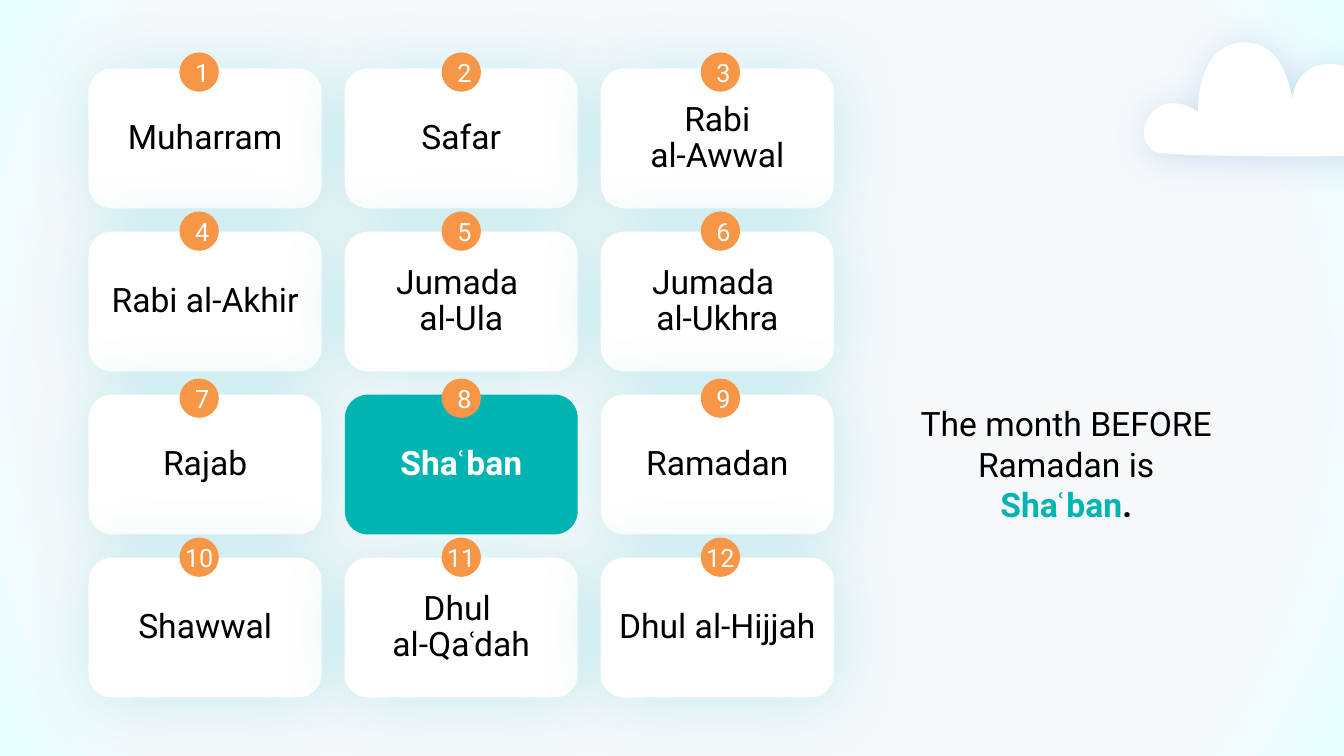
import lxml.etree
import pptx
import pptx.dml.color
import pptx.enum.shapes
import pptx.enum.text
import pptx.oxml.ns
import pptx.util

SHAPE = pptx.enum.shapes.MSO_SHAPE
FONT = "Roboto"
COLORS = {
    "sky": "F6F9FC", "sky_edge": "E7FFFF", "white": "FFFFFF", "black": "000000",
    "teal": "00B4B1", "orange": "F79646", "cloud_shadow": "8EB4E3",
}
MONTHS = [
    ["Muharram"], ["Safar"], ["Rabi", "al-Awwal"],
    ["Rabi al-Akhir"], ["Jumada ", "al-Ula"], ["Jumada ", "al-Ukhra"],
    ["Rajab"], ["Shaʿban"], ["Ramadan"],
    ["Shawwal"], ["Dhul ", "al-Qaʿdah"], ["Dhul al-Hijjah"],
]
ANSWER = 7
COLUMNS, ROWS = 3, 4
GAP = 0.23
BADGE = 0.39
BADGE_LEFTS = [0.9, 0.96, 0.99]     # from the left side of the card, by column
BADGE_TOPS = [-0.16, -0.2, -0.16, -0.2]   # from the top of the card, by row
# Cloud outline in hundredths of an inch: two handles and an end for each curve.
CLOUD_START = (1325, 64)
CLOUD_CURVES = [
    ((1292, 60), (1283, 86), (1282, 98)),
    ((1279, 89), (1274, 42), (1234, 42)),
    ((1191, 43), (1188, 96), (1188, 111)),
    ((1178, 104), (1168, 101), (1157, 103)),
    ((1147, 105), (1137, 115), (1135, 128)),
    ((1134, 135), (1136, 144), (1142, 148)),
    ((1146, 151), (1150, 152), (1154, 152)),
    ((1193, 156), (1359, 156), (1373, 153)),
    ((1384, 152), (1397, 148), (1399, 135)),
    ((1400, 126), (1394, 117), (1386, 114)),
    ((1379, 111), (1372, 109), (1364, 110)),
    ((1364, 105), (1361, 68), (1325, 64)),
]


def rgb(name):
    return pptx.dml.color.RGBColor.from_string(COLORS[name])


def add_child(parent, tag, **attributes):
    child = lxml.etree.SubElement(parent, pptx.oxml.ns.qn(tag))
    for name, value in attributes.items():
        child.set(name, str(value))
    return child


def inches(*lengths):
    return [pptx.util.Inches(length) for length in lengths]


def paint(sp, color):
    sp.shadow.inherit = False
    sp.fill.solid()
    sp.fill.fore_color.rgb = rgb(color)
    sp.line.fill.background()


def add_shadow(sp, color, opacity, blur):
    """Fill the empty effect list of a painted shape; blur is in points."""
    effects = sp.element.spPr.find(pptx.oxml.ns.qn("a:effectLst"))
    shadow = add_child(effects, "a:outerShdw", blurRad=pptx.util.Pt(blur),
                       dist=pptx.util.Pt(3), dir=45 * 60000, algn="tl", rotWithShape=0)
    tone = add_child(shadow, "a:srgbClr", val=COLORS[color])
    add_child(tone, "a:alpha", val=opacity * 1000)


def add_run(p, text, color, size=24, bold=False):
    r = p.add_run()
    r.text = text
    r.font.name = FONT
    r.font.size = pptx.util.Pt(size)
    r.font.bold = bold
    r.font.color.rgb = rgb(color)
    return r


def add_word(p, text, color, bold=False):
    """Add a name, with wider spacing after its ʿ when it is bold."""
    if not bold:
        add_run(p, text, color)
        return
    for part in text.partition("ʿ"):
        r = add_run(p, part, color, bold=True)
        if part == "ʿ":
            r.font._element.set("spc", "200")


def centred_paragraph(tf, index):
    p = tf.add_paragraph() if index else tf.paragraphs[0]
    p.alignment = pptx.enum.text.PP_ALIGN.CENTER
    return p


def add_background(s):
    fill = s.background.fill
    fill.gradient()
    for stop, color, position in zip(fill.gradient_stops, ("sky", "sky_edge"), (0.81, 1)):
        stop.color.rgb = rgb(color)
        stop.position = position
    grad = s.element.find(".//" + pptx.oxml.ns.qn("a:gradFill"))
    grad.remove(grad.find(pptx.oxml.ns.qn("a:lin")))
    circle = add_child(grad, "a:path", path="circle")
    add_child(circle, "a:fillToRect", l=50000, t=50000, r=50000, b=50000)


def add_card(s, box, lines, highlighted):
    sp = s.shapes.add_shape(SHAPE.ROUNDED_RECTANGLE, *inches(*box))
    paint(sp, "teal" if highlighted else "white")
    if not highlighted:
        add_shadow(sp, "teal", opacity=20, blur=50)
    tf = sp.text_frame
    tf.word_wrap = True
    tf.vertical_anchor = pptx.enum.text.MSO_ANCHOR.MIDDLE
    tf.margin_left = tf.margin_right = tf.margin_top = tf.margin_bottom = pptx.util.Inches(0.1)
    for i, line in enumerate(lines):
        p = centred_paragraph(tf, i)
        p.line_spacing = 0.9
        add_word(p, line, "white" if highlighted else "black", bold=highlighted)


def add_badge(s, left, top, number):
    sp = s.shapes.add_shape(SHAPE.OVAL, *inches(left, top, BADGE, BADGE))
    paint(sp, "orange")
    tf = sp.text_frame
    tf.word_wrap = number < 10
    tf.vertical_anchor = pptx.enum.text.MSO_ANCHOR.MIDDLE
    add_run(centred_paragraph(tf, 0), str(number), "white", size=18)


def add_calendar(s, left, top, width, height):
    card_w = (width - GAP * (COLUMNS - 1)) / COLUMNS
    card_h = (height - GAP * (ROWS - 1)) / ROWS
    corners = [(left + col * (card_w + GAP), top + row * (card_h + GAP))
               for row in range(ROWS) for col in range(COLUMNS)]
    for i, (x, y) in enumerate(corners):
        add_card(s, (x, y, card_w, card_h), MONTHS[i], i == ANSWER)
    for i, (x, y) in enumerate(corners):
        row, col = divmod(i, COLUMNS)
        add_badge(s, x + BADGE_LEFTS[col], y + BADGE_TOPS[row], i + 1)


def add_message(s, *box):
    tf = s.shapes.add_textbox(*inches(*box)).text_frame
    tf.word_wrap = True
    add_run(centred_paragraph(tf, 0), "The month BEFORE Ramadan is", "black")
    p = centred_paragraph(tf, 1)
    add_word(p, MONTHS[ANSWER][0], "teal", bold=True)
    add_run(p, ".", "black", bold=True)


def bend_lines(sp):
    """Turn each three line segments of a freeform into one Bezier curve."""
    lines = list(sp.element.iter(pptx.oxml.ns.qn("a:lnTo")))
    for handle1, handle2, end in zip(lines[::3], lines[1::3], lines[2::3]):
        curve = lxml.etree.Element(pptx.oxml.ns.qn("a:cubicBezTo"))
        handle1.addprevious(curve)
        for line in (handle1, handle2, end):
            curve.append(line[0])
            line.getparent().remove(line)


def add_cloud(s):
    outline = s.shapes.build_freeform(*CLOUD_START, scale=pptx.util.Inches(0.01))
    outline.add_line_segments([point for curve in CLOUD_CURVES for point in curve], close=True)
    sp = outline.convert_to_shape()
    bend_lines(sp)
    paint(sp, "white")
    add_shadow(sp, "cloud_shadow", opacity=40, blur=27)


def main():
    prs = pptx.Presentation()
    prs.slide_width, prs.slide_height = inches(13.33, 7.5)
    s = prs.slides.add_slide(prs.slide_layouts[6])
    add_background(s)
    add_calendar(s, 0.88, 0.68, 7.39, 6.24)
    add_message(s, 9, 3.95, 3.15, 1.72)
    add_cloud(s)
    prs.save("out.pptx")


if __name__ == "__main__":
    main()
